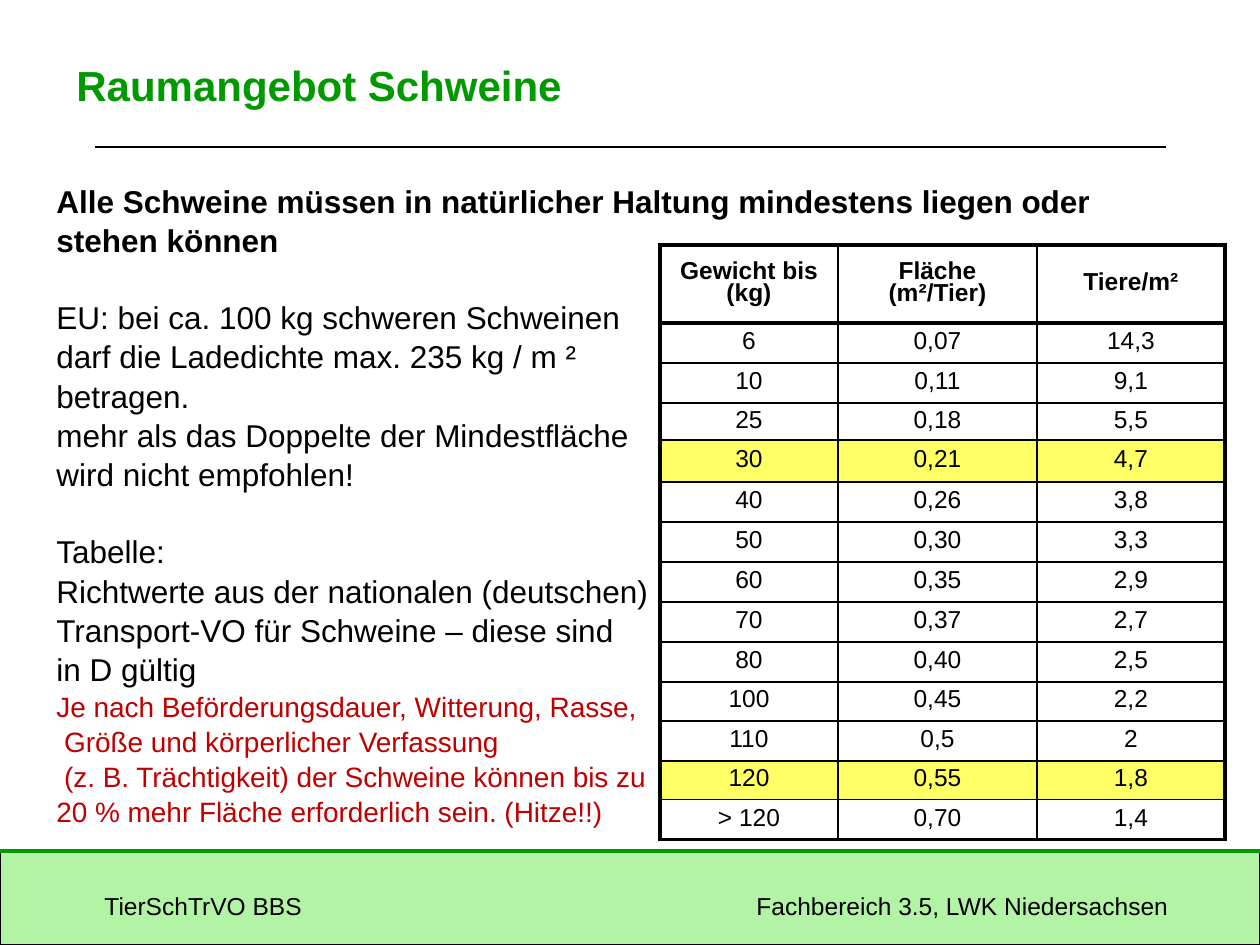
from dataclasses import dataclass

from lxml import etree
from pptx import Presentation
from pptx.dml.color import RGBColor
from pptx.enum.shapes import MSO_CONNECTOR, MSO_SHAPE
from pptx.enum.text import MSO_ANCHOR, PP_ALIGN
from pptx.oxml.ns import qn
from pptx.util import Emu, Pt

RECTANGLE = MSO_SHAPE.RECTANGLE
STRAIGHT = MSO_CONNECTOR.STRAIGHT
TOP, MIDDLE = MSO_ANCHOR.TOP, MSO_ANCHOR.MIDDLE
LEFT, CENTER = PP_ALIGN.LEFT, PP_ALIGN.CENTER
PX = 914400 / 126


@dataclass(frozen=True)
class Theme:
    font: str = "Arial"
    ink: str = "000000"
    green: str = "009900"
    footer: str = "B3F3A6"
    warning: str = "C00000"
    highlight: str = "FFFF66"
    title: int = 24
    body: int = 18
    note: int = 16
    small: int = 14
    thin: float = 1
    thick: float = 2.25


def px(value):
    return Emu(round(value * PX))


def rgb(value):
    return RGBColor.from_string(value)


def apply(target, values):
    for name, value in values.items():
        setattr(target, name, value)


class SlideBuilder:
    def __init__(self, slide, theme):
        self.slide, self.theme = slide, theme

    def rectangle(self, place, fill, line, width):
        box = self.slide.shapes.add_shape(RECTANGLE, *map(px, place))
        box.shadow.inherit = False
        box.fill.solid()
        box.fill.fore_color.rgb = rgb(fill)
        box.line.color.rgb = rgb(line)
        box.line.width = Pt(width)

    def line(self, ends, color, width):
        rule = self.slide.shapes.add_connector(STRAIGHT, *map(px, ends))
        rule.line.color.rgb = rgb(color)
        rule.line.width = Pt(width)
        etree.SubElement(rule._element.spPr, qn("a:effectLst"))

    def paragraph(self, para, text, size, color=None, bold=False,
                  align=LEFT, spacing=1.04, before=0):
        para.text = text
        apply(para, {"alignment": align, "line_spacing": spacing})
        if before:
            para.space_before = Pt(before)
        for span in para.runs:
            apply(span.font, {"name": self.theme.font, "size": Pt(size), "bold": bold})
            span.font.color.rgb = rgb(color or self.theme.ink)

    def text(self, place, paragraphs, anchor=TOP):
        frame = self.slide.shapes.add_textbox(*map(px, place)).text_frame
        apply(frame, {"word_wrap": True, "vertical_anchor": anchor})
        for index, values in enumerate(paragraphs):
            para = frame.add_paragraph() if index else frame.paragraphs[0]
            self.paragraph(para, **values)
        return frame

    def right_tab(self, para, position):
        tabs = etree.SubElement(para._p.get_or_add_pPr(), qn("a:tabLst"))
        etree.SubElement(tabs, qn("a:tab"), pos=str(px(position)), algn="r")

    def border(self, cell, side, width):
        line = etree.SubElement(cell._tc.get_or_add_tcPr(), qn(f"a:ln{side}"),
                                w=str(Pt(width)))
        fill = etree.SubElement(line, qn("a:solidFill"))
        etree.SubElement(fill, qn("a:srgbClr"), val=self.theme.ink)

    def table(self, left, top, widths, heights, rows, highlighted):
        place = (left, top, sum(widths), sum(heights))
        table = self.slide.shapes.add_table(len(rows), len(widths), *map(px, place)).table
        apply(table, {"first_row": False, "horz_banding": False})
        for column, width in zip(table.columns, widths):
            column.width = px(width)
        for row, height in zip(table.rows, heights):
            row.height = px(height)
        last_row, last_column = len(rows) - 1, len(widths) - 1
        for r, row in enumerate(rows):
            for c, text in enumerate(row):
                cell = table.cell(r, c)
                cell.vertical_anchor = MIDDLE
                self.paragraph(cell.text_frame.paragraphs[0], text, self.theme.small,
                               bold=r == 0, align=CENTER, spacing=0.8)
                # Thick frame and header rule, thin lines inside
                thick_sides = {"L": c == 0, "R": c == last_column,
                               "T": r <= 1, "B": r in (0, last_row)}
                for side, thick in thick_sides.items():
                    self.border(cell, side, self.theme.thick if thick else self.theme.thin)
                if row[0] in highlighted:
                    cell.fill.solid()
                    cell.fill.fore_color.rgb = rgb(self.theme.highlight)
                else:
                    cell.fill.background()


SPACE_REQUIREMENTS = [
    ("Gewicht bis (kg)", "Fläche (m²/Tier)", "Tiere/m²"),
    ("6", "0,07", "14,3"),
    ("10", "0,11", "9,1"),
    ("25", "0,18", "5,5"),
    ("30", "0,21", "4,7"),
    ("40", "0,26", "3,8"),
    ("50", "0,30", "3,3"),
    ("60", "0,35", "2,9"),
    ("70", "0,37", "2,7"),
    ("80", "0,40", "2,5"),
    ("100", "0,45", "2,2"),
    ("110", "0,5", "2"),
    ("120", "0,55", "1,8"),
    ("> 120", "0,70", "1,4"),
]
HEADLINE = [
    "Alle Schweine müssen in natürlicher Haltung mindestens liegen oder",
    "stehen können",
]
EU_RULE = [
    "EU: bei ca. 100 kg schweren Schweinen",
    "darf die Ladedichte max. 235 kg / m ²",
    "betragen.",
    "mehr als das Doppelte der Mindestfläche",
    "wird nicht empfohlen!",
]
TABLE_NOTE = [
    "Tabelle:",
    "Richtwerte aus der nationalen (deutschen)\vTransport-VO für Schweine – diese sind",
    "in D gültig",
]
WARNING = [
    "Je nach Beförderungsdauer, Witterung, Rasse,",
    " Größe und körperlicher Verfassung",
    " (z. B. Trächtigkeit) der Schweine können bis zu",
    "20 % mehr Fläche erforderlich sein. (Hitze!!)",
]


def main():
    theme = Theme()
    deck = Presentation()
    apply(deck, {"slide_width": px(1260), "slide_height": px(945)})
    builder = SlideBuilder(deck.slides.add_slide(deck.slide_layouts[6]), theme)

    # Footer band and rules
    builder.rectangle((0, 851, 1260, 94), theme.footer, theme.ink, 0.75)
    builder.line((95, 147, 1166, 147), theme.ink, theme.thin)
    builder.line((0, 851, 1260, 851), theme.green, 2)
    footer = builder.text((92, 866, 1168, 79), [
        {"text": "TierSchTrVO BBS\tFachbereich 3.5, LWK Niedersachsen", "size": theme.small},
    ], MIDDLE)
    builder.right_tab(footer.paragraphs[0], 1064)

    # Title
    builder.text((64, 47, 1071, 73), [
        {"text": "Raumangebot Schweine", "size": theme.title,
         "color": theme.green, "bold": True},
    ], MIDDLE)

    # Space requirement by weight
    heights = [78, 40, 40, 37, 42, 40, 40, 40, 40, 40, 39, 40, 39, 40]
    builder.table(660, 245, [178, 199, 188], heights, SPACE_REQUIREMENTS, {"30", "120"})

    # Explanations, each group with its own format and gap above
    groups = [
        (HEADLINE, {"size": theme.body, "bold": True}, 0),
        (EU_RULE, {"size": theme.body}, 21.6),
        (TABLE_NOTE, {"size": theme.body}, 21.6),
        (WARNING, {"size": theme.note, "color": theme.warning}, 0),
    ]
    builder.text((44, 174, 1131, 767), [
        {"text": text, "before": 0 if index else gap, **values}
        for lines, values, gap in groups
        for index, text in enumerate(lines)
    ])

    deck.save("out.pptx")


if __name__ == "__main__":
    main()
